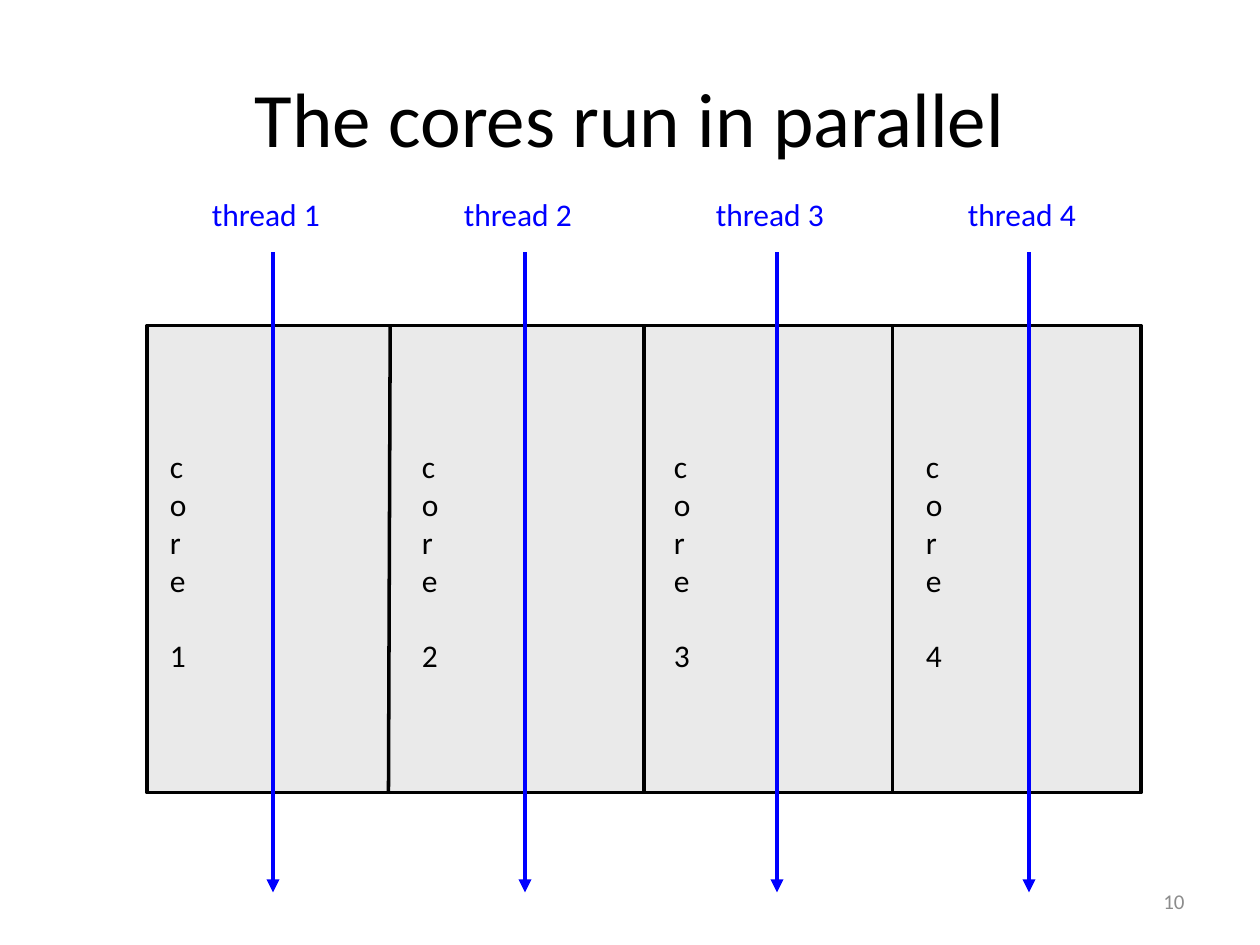
from dataclasses import dataclass

import pptx
import pptx.util
import pptx.dml.color
import pptx.enum.shapes
import pptx.enum.text
import pptx.oxml.ns
import lxml.etree

Pt = pptx.util.Pt
ALIGN = pptx.enum.text.PP_ALIGN
ANCHOR = pptx.enum.text.MSO_ANCHOR
FIT = pptx.enum.text.MSO_AUTO_SIZE

COLOURS = {
    "ink": "000000",
    "thread": "0000FF",
    "chip": "EAEAEA",
    "number": "8C8C8C",
}
FONT = "Calibri"
COUNT = 4
PITCH = 144
TOP, BOTTOM = 186, 453


@dataclass(frozen=True)
class Box:
    left: float
    top: float
    width: float
    height: float

    def points(self) -> list:
        return [Pt(n) for n in (self.left, self.top, self.width, self.height)]


@dataclass(frozen=True)
class Line:
    start: tuple[float, float]
    end: tuple[float, float]
    colour: str = "ink"
    weight: float = 2
    arrow: bool = False


def shade(name: str) -> pptx.dml.color.RGBColor:
    return pptx.dml.color.RGBColor.from_string(COLOURS[name])


def write(slide, text: str, box: Box, *, size: float = 18, colour: str = "ink",
          align=ALIGN.LEFT, anchor=ANCHOR.TOP, wrap: bool = True,
          fit=FIT.NONE, gap: float = 0) -> None:
    frame = slide.shapes.add_textbox(*box.points()).text_frame
    frame.word_wrap = wrap
    frame.auto_size = fit
    frame.vertical_anchor = anchor
    frame.text = text
    for index, para in enumerate(frame.paragraphs):
        para.alignment = align
        if index:
            para.space_before = Pt(gap)
        font = para.runs[0].font
        font.name = FONT
        font.size = Pt(size)
        font.color.rgb = shade(colour)


def draw(slide, line: Line) -> None:
    ends = [Pt(n) for n in line.start + line.end]
    kind = pptx.enum.shapes.MSO_CONNECTOR.STRAIGHT
    shape = slide.shapes.add_connector(kind, *ends)
    shape.line.color.rgb = shade(line.colour)
    shape.line.width = Pt(line.weight)
    name = pptx.oxml.ns.qn
    if line.arrow:
        stroke = shape.line._get_or_add_ln()
        lxml.etree.SubElement(stroke, name("a:tailEnd"), type="triangle")
    lxml.etree.SubElement(shape._element.spPr, name("a:effectLst"))


def chip(slide, box: Box) -> None:
    kind = pptx.enum.shapes.MSO_SHAPE.RECTANGLE
    shape = slide.shapes.add_shape(kind, *box.points())
    shape.shadow.inherit = False
    shape.fill.solid()
    shape.fill.fore_color.rgb = shade("chip")
    shape.line.color.rgb = shade("ink")
    shape.line.width = Pt(2)


def main() -> None:
    deck = pptx.Presentation()
    deck.slide_width, deck.slide_height = Pt(720), Pt(540)
    slide = deck.slides.add_slide(deck.slide_layouts[6])

    write(slide, "10", Box(516, 500.5, 168, 28.75), size=12, colour="number",
          align=ALIGN.RIGHT, anchor=ANCHOR.MIDDLE)
    write(slide, "The cores run in parallel", Box(36, 21.6, 648, 90), size=44,
          align=ALIGN.CENTER, anchor=ANCHOR.MIDDLE)

    chip(slide, Box(84, TOP, 568, BOTTOM - TOP))
    for upper, lower in ((223, 222), (368, 368), (510, 510)):
        draw(slide, Line((upper, TOP), (lower, BOTTOM)))

    for index in range(COUNT):
        shift = index * PITCH
        label = index + 1
        write(slide, f"core\n{label}", Box(90 + shift, 252, 26, 137),
              fit=FIT.SHAPE_TO_FIT_TEXT, gap=21.6)
        draw(slide, Line((156 + shift, 144), (156 + shift, 510),
                         "thread", 2.5, True))
        write(slide, f"thread {label}", Box(114 + shift, 108, 80.5, 29),
              colour="thread", wrap=False, fit=FIT.SHAPE_TO_FIT_TEXT)

    deck.save("out.pptx")


if __name__ == "__main__":
    main()
